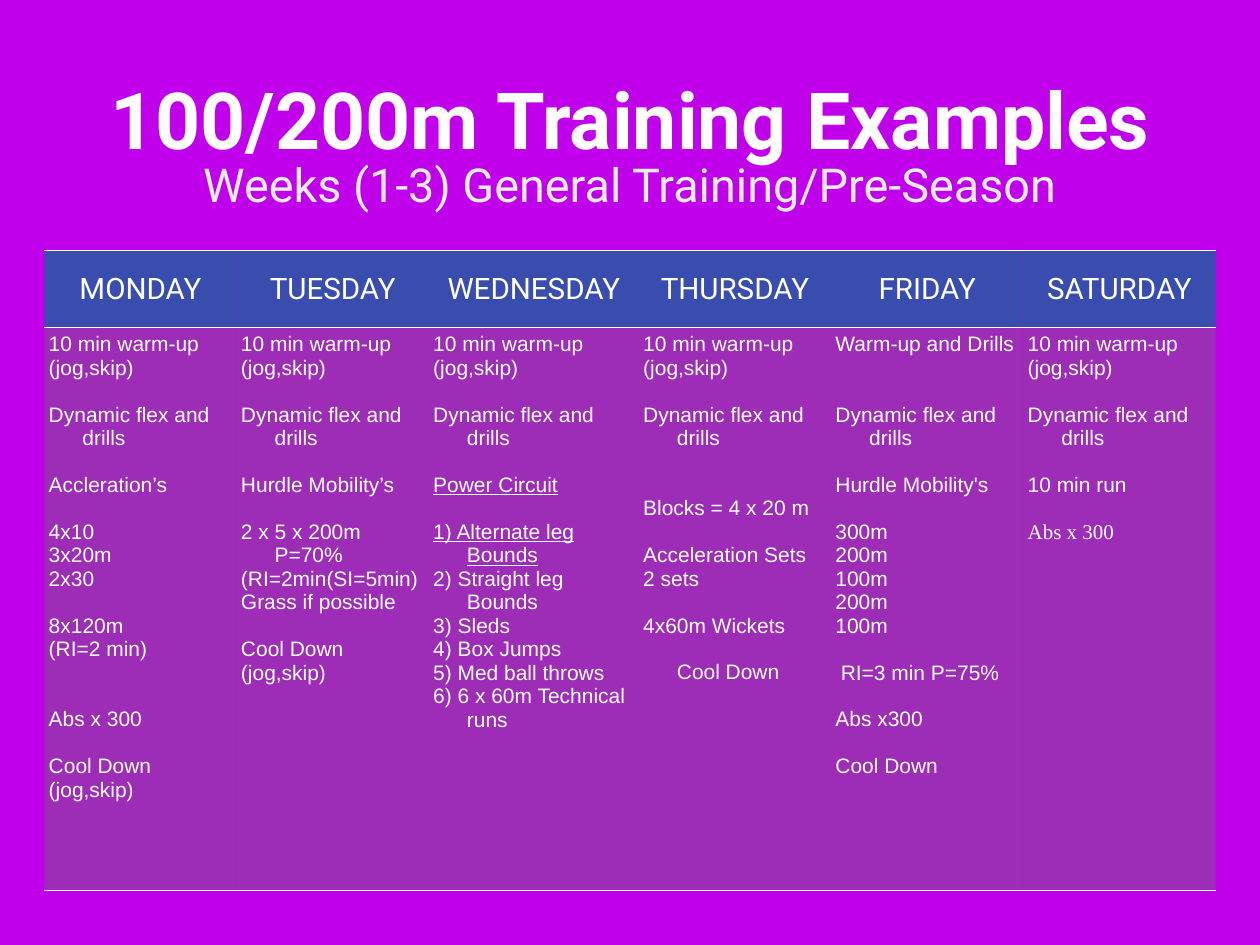
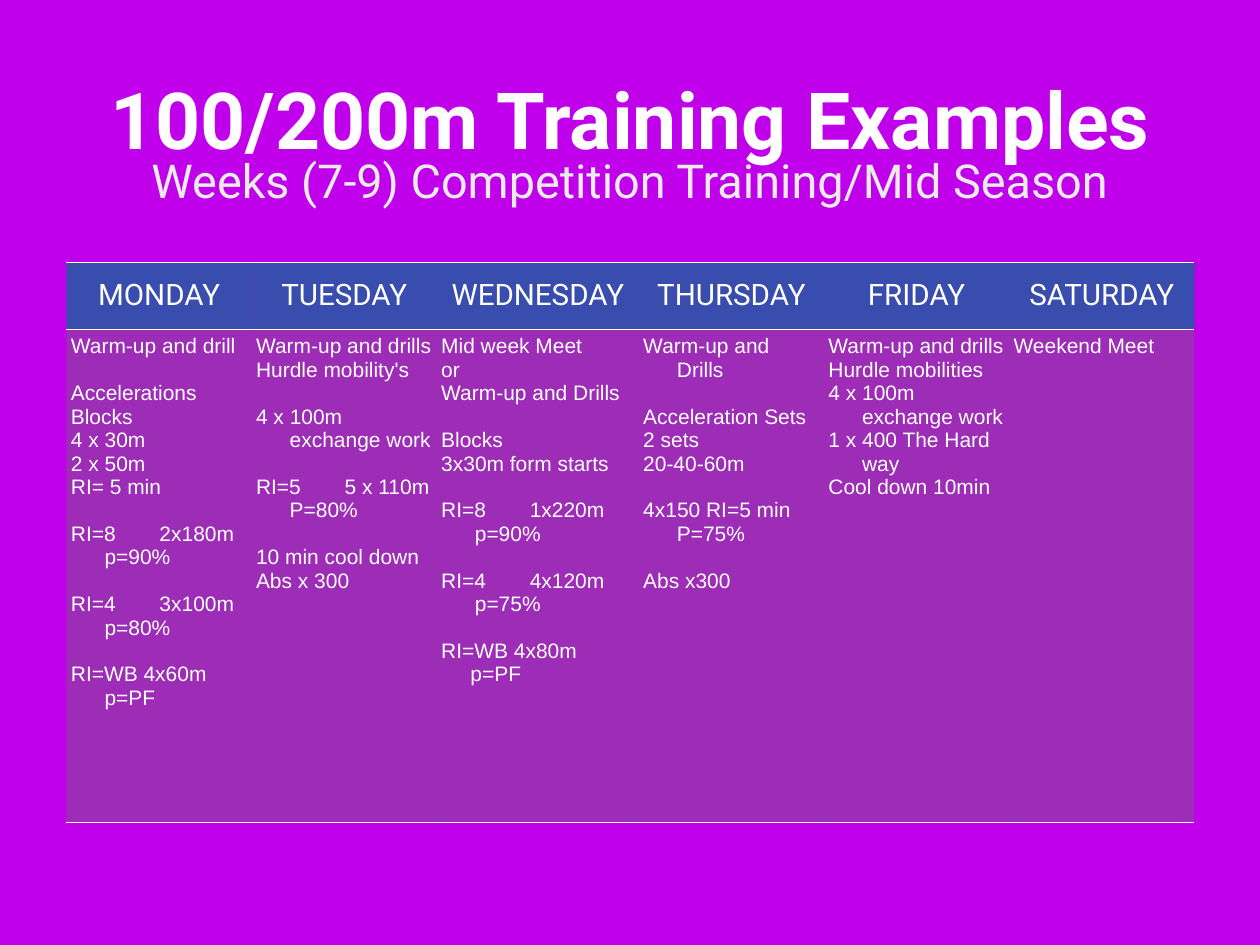
from dataclasses import dataclass

from pptx import Presentation
from pptx.dml.color import RGBColor
from pptx.enum.text import MSO_ANCHOR as ANCHOR, PP_ALIGN as ALIGN
from pptx.oxml.ns import qn
from pptx.util import Inches, Pt
from lxml.etree import SubElement

HANG = 0.38
DAYS = ["MONDAY", "TUESDAY", "WEDNESDAY", "THURSDAY", "FRIDAY", "SATURDAY"]
WARM_UP = ["10 min warm-up", "(jog,skip)", "", "Dynamic flex and drills"]
COOL_DOWN = ["Cool Down", "(jog,skip)"]


def rgb(value):
    return RGBColor.from_string(value)


@dataclass
class Line:
    text: str
    left: float = HANG
    first: float = -HANG
    underline: bool = False
    font: str = "Arial"
    tab: float = 0


def inset(text, left=HANG):
    return Line(text, left, 0)


def interval(rest, run, effort):
    return [Line(f"{rest}\t{run}", 0, 0, tab=0.7), inset(effort)]


class Deck:
    """Holds the shared style and the slide being built."""

    BACK, WHITE, SOFT = "C000EB", "FFFFFF", "EBEBEB"
    HEADER, BODY = ("1861A1", 80), ("6D6D6D", 41)
    HEAD_FONT = "Roboto"
    BLANK_LINE = 19

    def __init__(self):
        self.prs = Presentation()
        self.prs.slide_width, self.prs.slide_height = Inches(14.22), Inches(10.67)

    def add_slide(self, subtitle, subtitle_top, **schedule):
        self.s = self.prs.slides.add_slide(self.prs.slide_layouts[6])
        fill = self.s.background.fill
        fill.solid()
        fill.fore_color.rgb = rgb(self.BACK)
        self.heading("100/200m Training Examples", (0.83, 0.06, 12.56, 1.81),
                     64, self.WHITE, ANCHOR.BOTTOM, 0, True)
        self.schedule(**schedule)
        self.heading(subtitle, (0.75, subtitle_top, 12.72, 0.73),
                     38, self.SOFT, ANCHOR.MIDDLE, 0.06)

    def style(self, p, size, font, color, bold=False, underline=False):
        for r in p.runs:
            f = r.font
            f.size, f.name, f.bold = Pt(size), font, bold
            f.color.rgb = rgb(color)
            if underline:
                f.underline = True

    def heading(self, text, box, size, color, anchor, margin, bold=False):
        tf = self.s.shapes.add_textbox(*map(Inches, box)).text_frame
        tf.word_wrap = True
        tf.vertical_anchor = anchor
        tf.margin_left = tf.margin_right = Inches(margin)
        tf.margin_top = tf.margin_bottom = Inches(margin)
        p = tf.paragraphs[0]
        p.text, p.alignment = text, ALIGN.CENTER
        self.style(p, size, self.HEAD_FONT, color, bold)

    def schedule(self, left, top, day_width, mid_width, heights, plans):
        widths = [mid_width if day == "WEDNESDAY" else day_width for day in DAYS]
        box = map(Inches, (left, top, sum(widths), sum(heights)))
        table = self.s.shapes.add_table(2, len(DAYS), *box).table
        table.first_row = table.horz_banding = False
        for row, height in zip(table.rows, heights):
            row.height = Inches(height)
        for i, (day, width, plan) in enumerate(zip(DAYS, widths, plans)):
            table.columns[i].width = Inches(width)
            head, body = table.cell(0, i), table.cell(1, i)
            self.cell(head, self.HEADER)
            head.vertical_anchor = ANCHOR.MIDDLE
            head.text = day
            p = head.text_frame.paragraphs[0]
            p.alignment = ALIGN.CENTER
            self.style(p, 24, self.HEAD_FONT, self.WHITE)
            self.cell(body, self.BODY)
            self.plan(body.text_frame, plan)

    def cell(self, cell, fill):
        cell.margin_left = cell.margin_right = Inches(0.05)
        cell.margin_top = cell.margin_bottom = Inches(0.06)
        tcPr = cell._tc.get_or_add_tcPr()
        for side in "LRTB":
            ln = SubElement(tcPr, qn(f"a:ln{side}"), w=str(Pt(1)))
            if side in "LR":
                SubElement(ln, qn("a:noFill"))
            else:
                solid = SubElement(ln, qn("a:solidFill"))
                SubElement(solid, qn("a:srgbClr"), val=self.WHITE)
        color, opacity = fill
        cell.fill.solid()
        cell.fill.fore_color.rgb = rgb(color)
        clr = tcPr.find(qn("a:solidFill")).find(qn("a:srgbClr"))
        SubElement(clr, qn("a:alpha"), val=str(opacity * 1000))

    def plan(self, tf, lines):
        p, gap = None, 0
        for item in lines:
            if item == "":
                gap += self.BLANK_LINE
                continue
            line = Line(item) if isinstance(item, str) else item
            p = tf.add_paragraph() if p else tf.paragraphs[0]
            p.text = line.text
            if gap:
                p.space_before = Pt(gap)
            gap = 0
            pPr = p._p.get_or_add_pPr()
            pPr.set("marL", str(Inches(line.left)))
            pPr.set("indent", str(Inches(line.first)))
            if line.tab:
                tabs = SubElement(pPr, qn("a:tabLst"))
                SubElement(tabs, qn("a:tab"), pos=str(Inches(line.tab)), algn="l")
            self.style(p, 17, line.font, self.WHITE, underline=line.underline)


PRE_SEASON = [
    [*WARM_UP, "", "Accleration’s", "", "4x10", "3x20m", "2x30", "",
     "8x120m", "(RI=2 min)", "", "", "Abs x 300", "", *COOL_DOWN],
    [*WARM_UP, "", "Hurdle Mobility’s", "", "2 x 5 x 200m P=70%",
     "(RI=2min(SI=5min)", "Grass if possible", "", *COOL_DOWN],
    [*WARM_UP, "", Line("Power Circuit", underline=True), "",
     Line("1) Alternate leg Bounds", underline=True), "2) Straight leg Bounds",
     "3) Sleds", "4) Box Jumps", "5) Med ball throws",
     "6) 6 x 60m Technical runs"],
    [*WARM_UP, "", "", "Blocks = 4 x 20 m", "", "Acceleration Sets", "2 sets", "",
     "4x60m Wickets", "", inset("Cool Down")],
    ["Warm-up and Drills", "", "", "Dynamic flex and drills", "",
     "Hurdle Mobility's", "", "300m", "200m", "100m", "200m", "100m", "",
     inset("RI=3 min P=75%", 0.06), "", "Abs x300", "", "Cool Down"],
    [*WARM_UP, "", "10 min run", "", Line("Abs x 300", font="Times New Roman")],
]

MID_SEASON = [
    ["Warm-up and drill", "", "Accelerations", "Blocks", "4 x 30m", "2 x 50m",
     "RI= 5 min", "", *interval("RI=8", "2x180m", "p=90%"), "",
     *interval("RI=4", "3x100m", "p=80%"), "", "RI=WB 4x60m", inset("p=PF")],
    ["Warm-up and drills", "Hurdle mobility's", "", "4 x 100m exchange work", "",
     *interval("RI=5", "5 x 110m", "P=80%"), "", "10 min cool down", "Abs x 300"],
    ["Mid week Meet", "or", "Warm-up and Drills", "", "Blocks",
     "3x30m form starts", "", *interval("RI=8", "1x220m", "p=90%"), "",
     *interval("RI=4", "4x120m", "p=75%"), "", "RI=WB 4x80m", inset("p=PF", 0.33)],
    ["Warm-up and Drills", "", "Acceleration Sets", "2 sets", "20-40-60m", "",
     "4x150 RI=5 min P=75%", "", "Abs x300"],
    ["Warm-up and drills", "Hurdle mobilities", "4 x 100m exchange work",
     "1 x 400 The Hard way", "Cool down 10min"],
    ["Weekend Meet"],
]


def main():
    deck = Deck()
    deck.add_slide("Weeks (1-3) General Training/Pre-Season", 1.71,
                   left=0.5, top=2.83, day_width=2.17, mid_width=2.37,
                   heights=(0.87, 6.35), plans=PRE_SEASON)
    deck.add_slide("Weeks (7-9) Competition Training/Mid Season", 1.67,
                   left=0.75, top=2.96, day_width=2.09, mid_width=2.28,
                   heights=(0.76, 5.57), plans=MID_SEASON)
    deck.prs.save("out.pptx")


if __name__ == "__main__":
    main()
